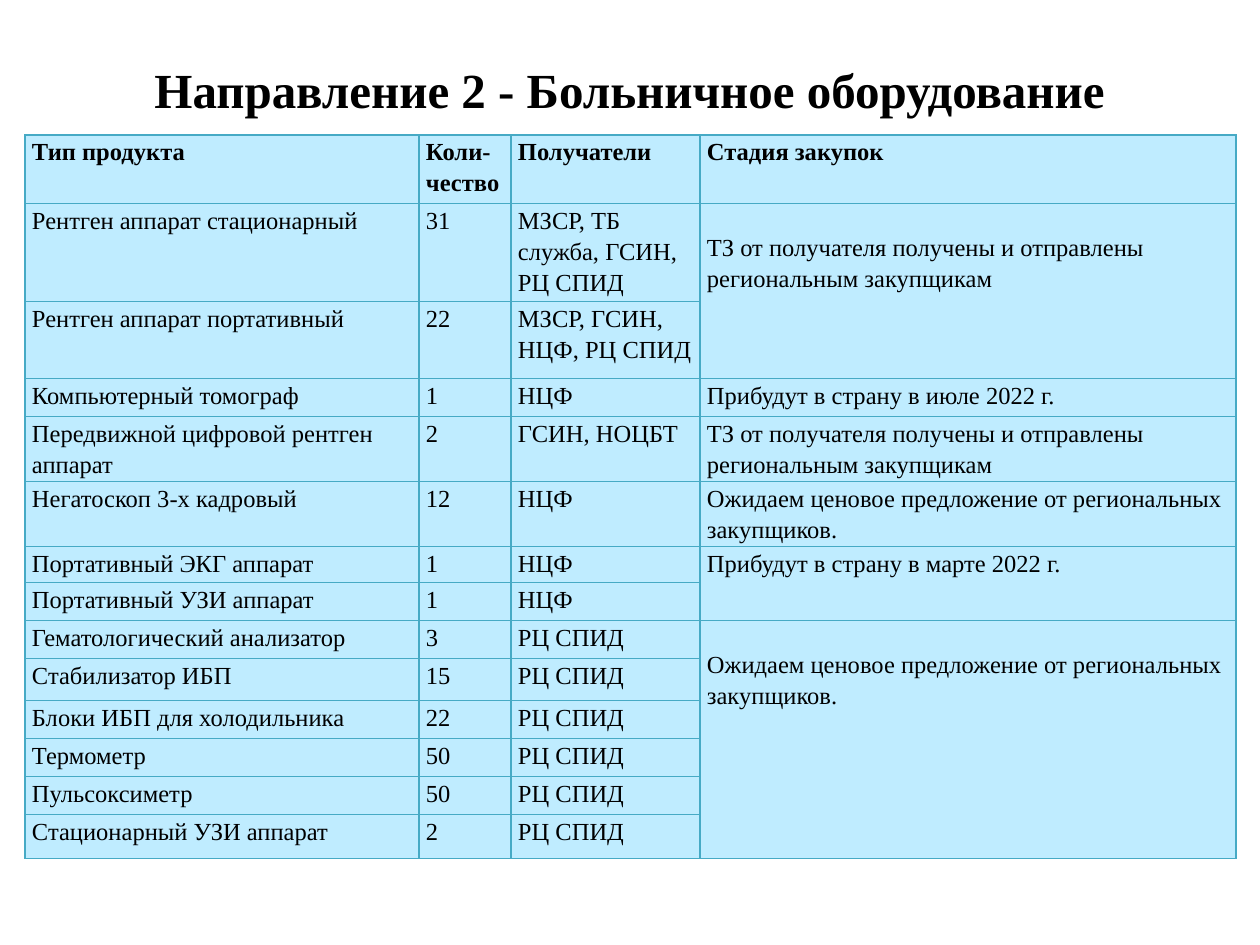
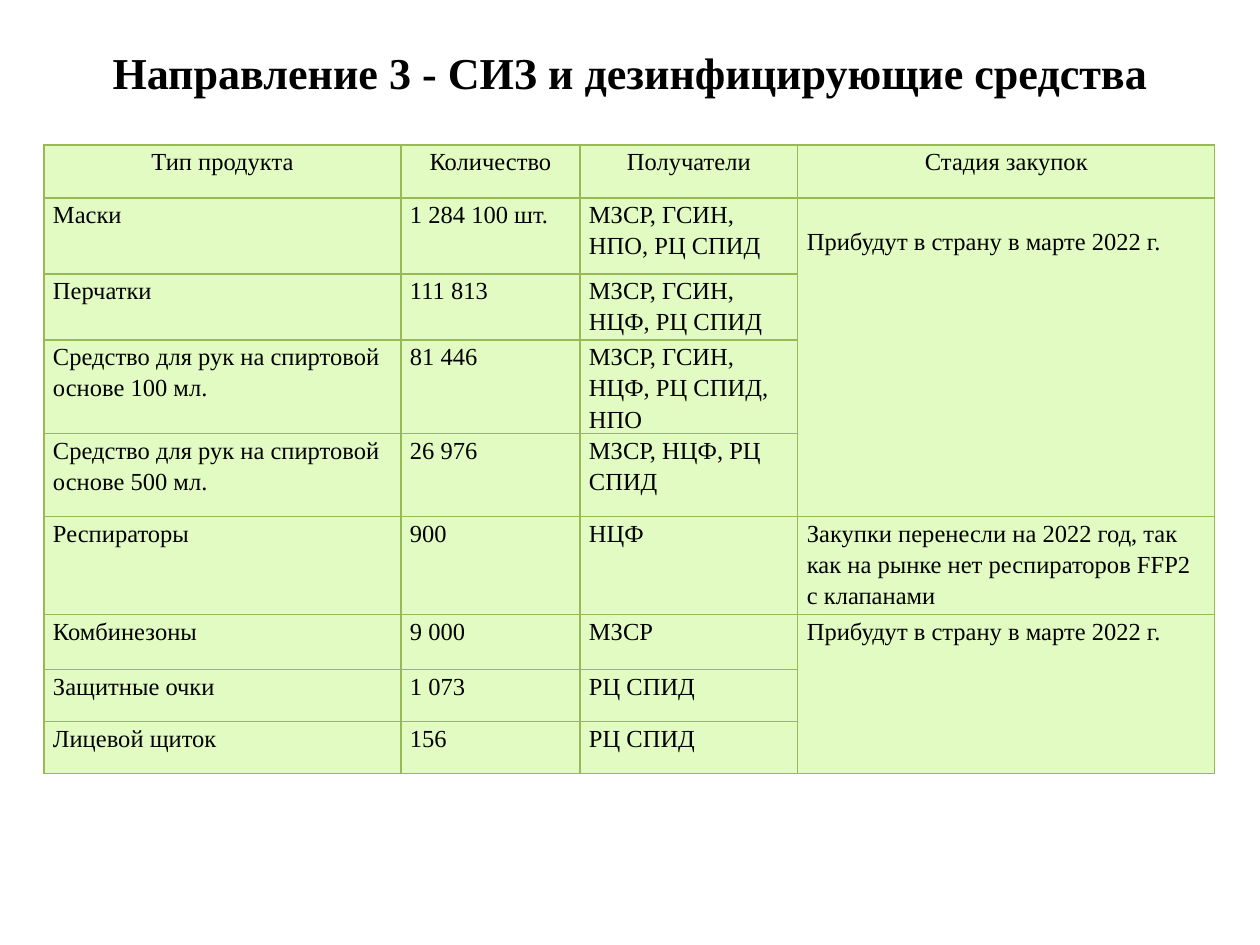
from typing import Any, NamedTuple

from lxml import etree
from pptx import Presentation
from pptx import util as u
from pptx.dml.color import RGBColor
from pptx.enum import text
from pptx.oxml.ns import qn

PX_PER_INCH = 126
TITLE_ONLY_LAYOUT = 5
BORDER_PT = 0.75
EMPTY_LINE = 27
COLORS = {
    "text": "000000",
    "blue_fill": "BFECFF",
    "blue_line": "46AAC5",
    "green_fill": "E2FBC2",
    "green_line": "98B955",
}
FONT = {"name": "Times New Roman", "size": u.Pt(14), "bold": False}
TITLE_FRAME = {
    "word_wrap": True,
    "auto_size": text.MSO_AUTO_SIZE.NONE,
    "vertical_anchor": text.MSO_ANCHOR.MIDDLE,
}
HEADINGS_END = ("Получатели", "Стадия закупок")

TO_BUYERS = "ТЗ от получателя получены и отправлены региональным закупщикам"
AWAITING_OFFER = "Ожидаем ценовое предложение от региональных закупщиков."
ARRIVING_MARCH = "Прибудут в страну в марте 2022 г."


class Box(NamedTuple):
    left: int
    top: int
    width: int
    height: int


class Title(NamedTuple):
    wording: str
    box: Box
    size: float
    paragraph_format: dict[str, Any]


class Product(NamedTuple):
    name: str
    quantity: str
    recipients: str
    height: int


class Stage(NamedTuple):
    """Procurement stage shared by a run of consecutive products."""
    wording: str
    product_count: int = 1
    lowered: bool = False


class ProcurementTable(NamedTuple):
    left: int
    top: int
    column_widths: tuple[int, ...]
    header_height: int
    headings: tuple[str, ...]
    header_bold: bool
    header_alignment: text.PP_ALIGN
    side_margin: int
    theme: str
    products: tuple[Product, ...]
    stages: tuple[Stage, ...]


HOSPITAL_TITLE = Title(
    "Направление 2 - Больничное оборудование", Box(63, 38, 1133, 97), 28,
    {"line_spacing": 1.07, "space_after": u.Pt(8)},
)
HOSPITAL_TABLE = ProcurementTable(
    left=25, top=135, column_widths=(394, 92, 189, 536), header_height=69,
    headings=("Тип продукта", "Коли-чество", *HEADINGS_END),
    header_bold=True, header_alignment=text.PP_ALIGN.LEFT,
    side_margin=7, theme="blue",
    products=(
        Product("Рентген аппарат стационарный", "31", "МЗСР, ТБ служба, ГСИН, РЦ СПИД", 98),
        Product("Рентген аппарат портативный", "22", "МЗСР, ГСИН, НЦФ, РЦ СПИД", 77),
        Product("Компьютерный томограф", "1", "НЦФ", 38),
        Product("Передвижной цифровой рентген аппарат", "2", "ГСИН, НОЦБТ", 65),
        Product("Негатоскоп 3-х кадровый", "12", "НЦФ", 65),
        Product("Портативный ЭКГ аппарат", "1", "НЦФ", 36),
        Product("Портативный УЗИ аппарат", "1", "НЦФ", 38),
        Product("Гематологический анализатор", "3", "РЦ СПИД", 38),
        Product("Стабилизатор ИБП", "15", "РЦ СПИД", 42),
        Product("Блоки ИБП для холодильника", "22", "РЦ СПИД", 38),
        Product("Термометр", "50", "РЦ СПИД", 38),
        Product("Пульсоксиметр", "50", "РЦ СПИД", 38),
        Product("Стационарный УЗИ аппарат", "2", "РЦ СПИД", 44),
    ),
    stages=(
        Stage(TO_BUYERS, 2, lowered=True),
        Stage("Прибудут в страну в июле 2022 г."),
        Stage(TO_BUYERS),
        Stage(AWAITING_OFFER),
        Stage(ARRIVING_MARCH, 2),
        Stage(AWAITING_OFFER, 6, lowered=True),
    ),
)

PROTECTION_TITLE = Title(
    "Направление 3 - СИЗ и дезинфицирующие средства", Box(63, 38, 1134, 68), 25.2, {},
)
PROTECTION_TABLE = ProcurementTable(
    left=44, top=145, column_widths=(357, 179, 218, 417), header_height=53,
    headings=("Тип продукта", "Количество", *HEADINGS_END),
    header_bold=False, header_alignment=text.PP_ALIGN.CENTER,
    side_margin=9, theme="green",
    products=(
        Product("Маски", "1 284 100 шт.", "МЗСР, ГСИН, НПО, РЦ СПИД", 76),
        Product("Перчатки", "111 813", "МЗСР, ГСИН, НЦФ, РЦ СПИД", 66),
        Product("Средство для рук на спиртовой основе 100 мл.", "81 446",
                "МЗСР, ГСИН, НЦФ, РЦ СПИД, НПО", 93),
        Product("Средство для рук на спиртовой основе 500 мл.", "26 976",
                "МЗСР, НЦФ, РЦ СПИД", 83),
        Product("Респираторы", "900", "НЦФ", 98),
        Product("Комбинезоны", "9 000", "МЗСР", 55),
        Product("Защитные очки", "1 073", "РЦ СПИД", 52),
        Product("Лицевой щиток", "156", "РЦ СПИД", 52),
    ),
    stages=(
        Stage(ARRIVING_MARCH, 4, lowered=True),
        Stage("Закупки перенесли на 2022 год, так как на рынке нет респираторов FFP2 с клапанами"),
        Stage(ARRIVING_MARCH, 3),
    ),
)


def px(length: int) -> u.Emu:
    return u.Emu(round(length * u.Inches(1) / PX_PER_INCH))


def apply(target: Any, values: dict[str, Any]) -> None:
    for name, value in values.items():
        setattr(target, name, value)


def write(frame: Any, wording: str, font: dict[str, Any], paragraph_format: dict[str, Any]) -> None:
    paragraph = frame.paragraphs[0]
    apply(paragraph, paragraph_format)
    run = paragraph.add_run()
    run.text = wording
    apply(run.font, FONT | font)
    run.font.color.rgb = RGBColor.from_string(COLORS["text"])


def add_title(slide: Any, title: Title) -> None:
    shape = slide.shapes.title
    apply(shape, {name: px(value) for name, value in title.box._asdict().items()})
    apply(shape.text_frame, TITLE_FRAME)
    write(shape.text_frame, title.wording, {"size": u.Pt(title.size), "bold": True},
          {"alignment": text.PP_ALIGN.CENTER} | title.paragraph_format)


def style_cell(cell: Any, side_margin: int, theme: str) -> None:
    margins = {"margin_left": side_margin, "margin_right": side_margin,
               "margin_top": 0, "margin_bottom": 0}
    apply(cell, {name: px(value) for name, value in margins.items()})
    properties = cell._tc.get_or_add_tcPr()
    for side in "LRTB":
        line = etree.SubElement(properties, qn(f"a:ln{side}"), w=str(u.Pt(BORDER_PT)))
        fill = etree.SubElement(line, qn("a:solidFill"))
        etree.SubElement(fill, qn("a:srgbClr"), val=COLORS[f"{theme}_line"])
    cell.fill.solid()
    cell.fill.fore_color.rgb = RGBColor.from_string(COLORS[f"{theme}_fill"])


def add_procurement_table(slide: Any, content: ProcurementTable) -> None:
    heights = (content.header_height, *(product.height for product in content.products))
    table = slide.shapes.add_table(
        len(heights), len(content.column_widths), px(content.left), px(content.top),
        px(sum(content.column_widths)), px(sum(heights)),
    ).table
    for column, width in zip(table.columns, content.column_widths):
        column.width = px(width)
    for row, height in zip(table.rows, heights):
        row.height = px(height)
    for cell in table.iter_cells():
        style_cell(cell, content.side_margin, content.theme)

    body_format = {"line_spacing": 1.15, "alignment": text.PP_ALIGN.LEFT}
    header_format = body_format | {"alignment": content.header_alignment}
    for column_index, heading in enumerate(content.headings):
        write(table.cell(0, column_index).text_frame, heading,
              {"bold": content.header_bold}, header_format)
    for row_index, product in enumerate(content.products, start=1):
        for column_index, wording in enumerate(product[:3]):
            write(table.cell(row_index, column_index).text_frame, wording, {}, body_format)

    stage_column = len(content.headings) - 1
    first_row = 1
    for stage in content.stages:
        cell = table.cell(first_row, stage_column)
        first_row += stage.product_count
        if stage.product_count > 1:
            cell.merge(table.cell(first_row - 1, stage_column))
        if stage.lowered:
            cell.margin_top = px(EMPTY_LINE)
        write(cell.text_frame, stage.wording, {}, body_format)


def main() -> None:
    presentation = Presentation()
    apply(presentation, {"slide_width": px(1260), "slide_height": px(945)})
    for title, table in ((HOSPITAL_TITLE, HOSPITAL_TABLE), (PROTECTION_TITLE, PROTECTION_TABLE)):
        slide = presentation.slides.add_slide(presentation.slide_layouts[TITLE_ONLY_LAYOUT])
        add_title(slide, title)
        add_procurement_table(slide, table)
    presentation.save("out.pptx")


if __name__ == "__main__":
    main()
